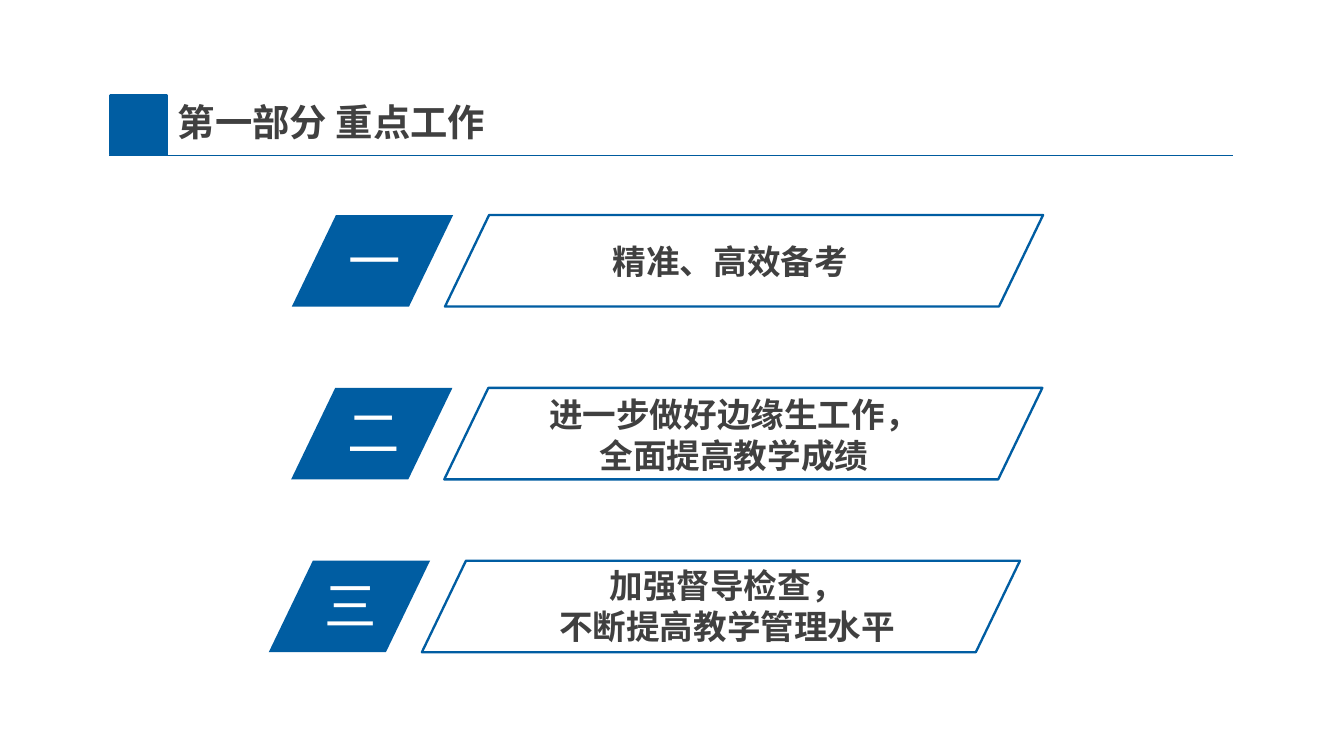
from dataclasses import dataclass

from lxml import etree
from pptx import Presentation
from pptx import util as u
from pptx.dml.color import RGBColor
from pptx.enum import shapes, text
from pptx.oxml.ns import qn


@dataclass(frozen=True)
class Theme:
    font: str = "Noto Sans CJK SC"
    blue: str = "005DA2"
    rule: str = "005B9E"
    ink: str = "404040"
    white: str = "FFFFFF"
    title_size: int = 20
    body_size: int = 18
    number_size: int = 28
    line_factor: float = 1.22
    slant: float = 0.482


def color(value):
    return RGBColor.from_string(value)


class SlideBuilder:
    """Holds the theme and the current slide."""

    def __init__(self, slide, theme):
        self.slide = slide
        self.theme = theme

    def set_text(self, shape, lines, size, ink, bold=False, centered=False, insets=(7.2, 3.6)):
        frame = shape.text_frame
        frame.word_wrap = True
        frame.auto_size = text.MSO_AUTO_SIZE.NONE
        frame.vertical_anchor = text.MSO_ANCHOR.TOP
        frame.margin_left = frame.margin_right = u.Pt(insets[0])
        frame.margin_top = frame.margin_bottom = u.Pt(insets[1])
        for index, line in enumerate(lines):
            paragraph = frame.add_paragraph() if index else frame.paragraphs[0]
            paragraph.alignment = text.PP_ALIGN.CENTER if centered else text.PP_ALIGN.LEFT
            paragraph.space_before = u.Pt(0)
            paragraph.line_spacing = u.Pt(round(size * self.theme.line_factor, 1))
            run = paragraph.add_run()
            run.text = line
            run.font.size = u.Pt(size)
            run.font.bold = bold
            run.font.color.rgb = color(ink)
            run.font.name = self.theme.font
            # East Asian text takes its font from a:ea
            east_asian = etree.SubElement(run.font._element, qn("a:ea"))
            east_asian.set("typeface", self.theme.font)

    def title(self, line, left, top, width, height):
        shape = self.slide.shapes.title
        shape.left, shape.top = u.Pt(left), u.Pt(top)
        shape.width, shape.height = u.Pt(width), u.Pt(height)
        self.set_text(shape, [line], self.theme.title_size, self.theme.ink, bold=True)

    def label(self, lines, left, top, width, height, **style):
        box = self.slide.shapes.add_textbox(u.Pt(left), u.Pt(top), u.Pt(width), u.Pt(height))
        self.set_text(box, lines, **style)

    def block(self, kind, left, top, width, height, fill=None, line=None, weight=1.25):
        shape = self.slide.shapes.add_shape(
            kind, u.Pt(left), u.Pt(top), u.Pt(width), u.Pt(height))
        shape.shadow.inherit = False
        if fill:
            shape.fill.solid()
            shape.fill.fore_color.rgb = color(fill)
        else:
            shape.fill.background()
        if line:
            shape.line.color.rgb = color(line)
            shape.line.width = u.Pt(weight)
        else:
            shape.line.fill.background()
        return shape

    def parallelogram(self, left, top, width, height, **style):
        shape = self.block(shapes.MSO_SHAPE.PARALLELOGRAM, left, top, width, height, **style)
        shape.adjustments[0] = self.theme.slant

    def rule(self, left, right, y):
        line = self.slide.shapes.add_connector(
            shapes.MSO_CONNECTOR.STRAIGHT, u.Pt(left), u.Pt(y), u.Pt(right), u.Pt(y))
        line.line.color.rgb = color(self.theme.rule)
        line.line.width = u.Pt(0.75)
        etree.SubElement(line._element.spPr, qn("a:effectLst"))

    def agenda_row(self, number, lines, left, top, text_left, text_top, centered):
        theme = self.theme
        # Numbered badge
        self.parallelogram(left, top, 86.4, 49, fill=theme.blue)
        self.label([number], left + 23, top + 2.7, 74, 41,
                   size=theme.number_size, ink=theme.white)
        # Outlined topic
        self.label(lines, text_left, text_top, 234.7, 5.6 + 22 * len(lines),
                   size=theme.body_size, ink=theme.ink, bold=True,
                   centered=centered, insets=(5, 2.8))
        self.parallelogram(left + 82, top, 320.4, 49, line=theme.blue)


def main():
    presentation = Presentation()
    presentation.slide_width, presentation.slide_height = u.Pt(720), u.Pt(405)
    slide = presentation.slides.add_slide(presentation.slide_layouts[5])
    theme = Theme()
    builder = SlideBuilder(slide, theme)

    # Heading
    builder.rule(58.5, 660.5, 83.4)
    builder.title("第一部分 重点工作", 88, 49, 186, 31.7)
    builder.block(shapes.MSO_SHAPE.RECTANGLE, 59.2, 51.2, 29.8, 31.6,
                  fill=theme.blue, line=theme.blue, weight=2)

    # Agenda: number, lines, row left, text left, text offset, centered
    rows = [
        ("一", ["精准、高效备考"], 156.4, 323.3, 10.8, False),
        ("二", ["进一步做好边缘生工作，", "全面提高教学成绩"], 156, 275.8, 0, True),
        ("三", ["加强督导检查，", "不断提高教学管理水平"], 144, 272.2, -0.8, True),
    ]
    for index, (number, lines, left, text_left, offset, centered) in enumerate(rows):
        top = 115.2 + 92.6 * index
        builder.agenda_row(number, lines, left, top, text_left, top + offset, centered)

    presentation.save("out.pptx")


if __name__ == "__main__":
    main()
